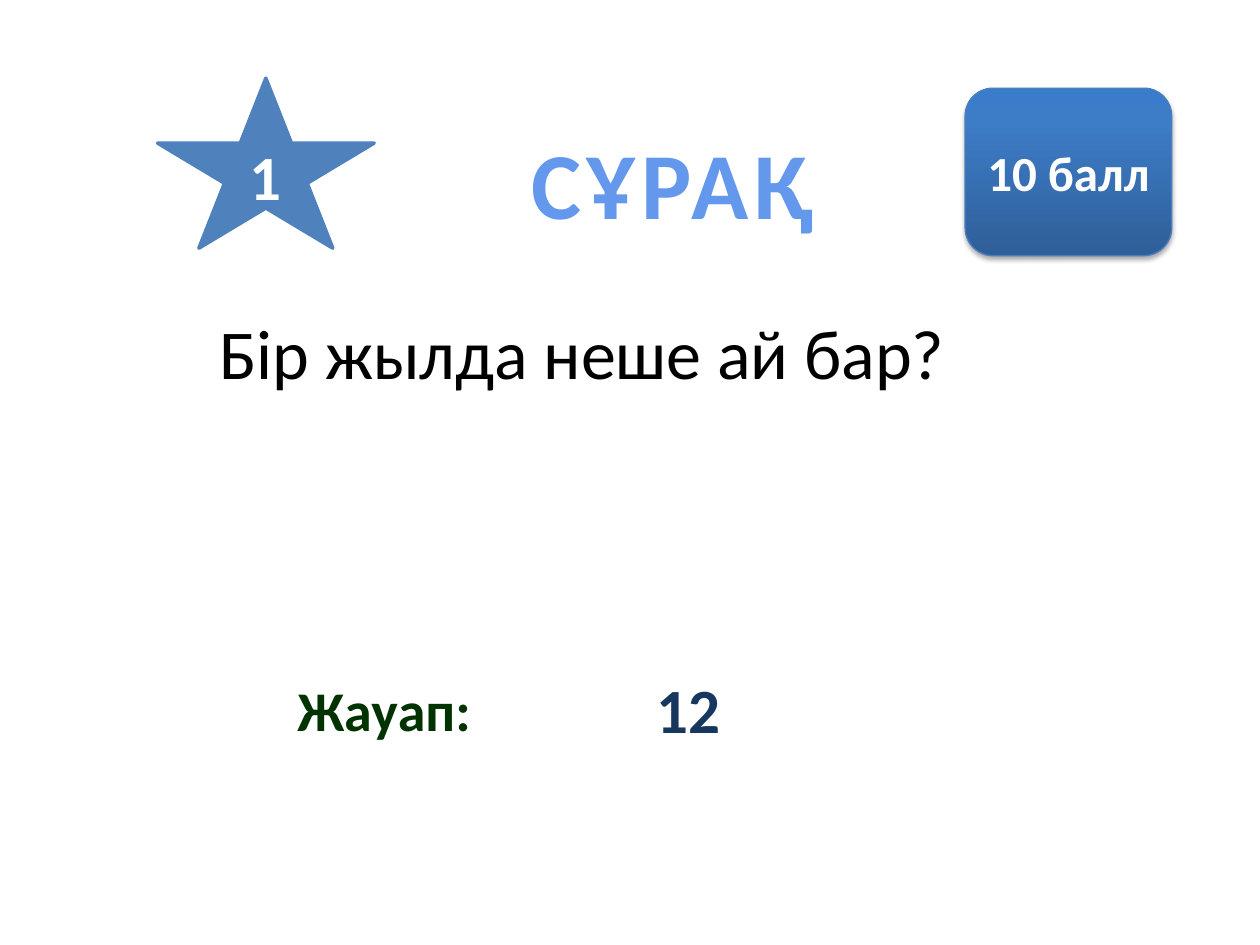
from lxml.etree import SubElement
from pptx import Presentation
from pptx.dml.color import RGBColor
from pptx.enum.shapes import MSO_SHAPE as Preset
from pptx.enum.text import MSO_ANCHOR as Anchor, MSO_AUTO_SIZE as AutoSize, PP_ALIGN as Align
from pptx.oxml import parse_xml
from pptx.oxml.ns import nsdecls, qn
from pptx.util import Inches, Pt


def color(value):
    """Return the colour for a hex string."""
    return RGBColor.from_string(value)


def make_gradient(stops, angle):
    """Return a linear gradient element from (percent, colour) stops."""
    marks = "".join(
        f'<a:gs pos="{percent * 1000}"><a:srgbClr val="{value}"/></a:gs>'
        for percent, value in stops
    )
    return parse_xml(
        f'<a:gradFill {nsdecls("a")} rotWithShape="1"><a:gsLst>{marks}</a:gsLst>'
        f'<a:lin ang="{angle * 60000}" scaled="0"/></a:gradFill>'
    )


def add_shadow(effects, value, opacity, blur, distance, angle):
    """Add an outer shadow to an effect list."""
    shadow = SubElement(
        effects, qn("a:outerShdw"), blurRad=str(Pt(blur)), dist=str(Pt(distance)),
        dir=str(angle * 60000), algn="tl", rotWithShape="0",
    )
    tint = SubElement(shadow, qn("a:srgbClr"), val=value)
    SubElement(tint, qn("a:alpha"), val=str(opacity * 1000))


def set_text(box, text, size, value, bold=True, align=Align.CENTER, **frame_format):
    """Write one formatted paragraph and return it."""
    frame = box.text_frame
    for name, setting in ({"word_wrap": True} | frame_format).items():
        setattr(frame, name, setting)
    para = frame.paragraphs[0]
    para.alignment = align
    span = para.add_run()
    span.text = text
    for name, setting in {"name": "Calibri", "size": Pt(size), "bold": bold}.items():
        setattr(span.font, name, setting)
    if value:
        span.font.color.rgb = color(value)
    return para


def add_text(page, place, *content, **formats):
    """Add a text box and return its paragraph."""
    box = page.shapes.add_textbox(*map(Inches, place))
    return set_text(box, *content, **formats)


def add_badge(page, preset, place, text, size, line, width):
    """Add a preset shape with a white centred label."""
    badge = page.shapes.add_shape(preset, *map(Inches, place))
    badge.shadow.inherit = False
    badge.line.color.rgb = color(line)
    badge.line.width = Pt(width)
    set_text(badge, text, size, "FFFFFF", vertical_anchor=Anchor.MIDDLE)
    return badge


def add_title(page, place, text):
    """Place the title and give it gradient, outlined, shadowed letters."""
    title = page.shapes.title
    title.left, title.top, title.width, title.height = map(Inches, place)
    para = set_text(title, text, 54, None, word_wrap=False,
                    vertical_anchor=Anchor.TOP, auto_size=AutoSize.SHAPE_TO_FIT_TEXT)
    letters = para.runs[0].font._element
    letters.set("spc", "300")
    outline = parse_xml(
        f'<a:ln {nsdecls("a")} w="{Pt(0.9)}"><a:solidFill>'
        '<a:srgbClr val="F4F6F9"/></a:solidFill></a:ln>'
    )
    effects = parse_xml(f'<a:effectLst {nsdecls("a")}/>')
    add_shadow(effects, "000000", 35, 3, 2, 45)
    fill = make_gradient([(10, "6398ED"), (75, "265EA0")], 90)
    for index, part in enumerate((outline, fill, effects)):
        letters.insert(index, part)


def main():
    """Build the quiz question slide."""
    deck = Presentation()
    deck.slide_width, deck.slide_height = Inches(10), Inches(7.5)
    page = deck.slides.add_slide(deck.slide_layouts[5])
    grow = {"auto_size": AutoSize.SHAPE_TO_FIT_TEXT}

    add_title(page, (4.09, 0.94, 2.49, 1.01), "СҰРАҚ")
    add_text(page, (2.11, 5.31, 1.88, 0.64), "Жауап:", 32, "003300", **grow)
    add_text(page, (3.59, 4.84, 3.75, 1.56), "12", 36, "17375E",
             vertical_anchor=Anchor.MIDDLE)

    points = add_badge(page, Preset.ROUNDED_RECTANGLE, (7.66, 0.7, 1.64, 1.33),
                       "10 балл", 28, "4B7EBC", 0.75)
    properties = points._element.spPr
    stops = [(0, "2F5F99"), (80, "3D7CC7"), (100, "3A7CCB")]
    properties.find(qn("a:prstGeom")).addnext(make_gradient(stops, 270))
    add_shadow(properties.find(qn("a:effectLst")), "000000", 35, 3.1, 1.8, 90)

    star = add_badge(page, Preset.STAR_5_POINT, (1.25, 0.62, 1.72, 1.35),
                     "1", 36, "4F81BD", 2)
    star.fill.solid()
    star.fill.fore_color.rgb = color("4F81BD")

    question = add_text(page, (1.14, 2.41, 7.99, 0.77), "Бір жылда неше ай бар?",
                        40, "000000", bold=False, align=Align.JUSTIFY, **grow)
    question.level = 1
    question.space_after = Pt(10)
    indent = question._p.get_or_add_pPr()
    indent.set("marL", str(Inches(0.5)))
    indent.set("indent", "0")

    deck.save("out.pptx")


if __name__ == "__main__":
    main()
